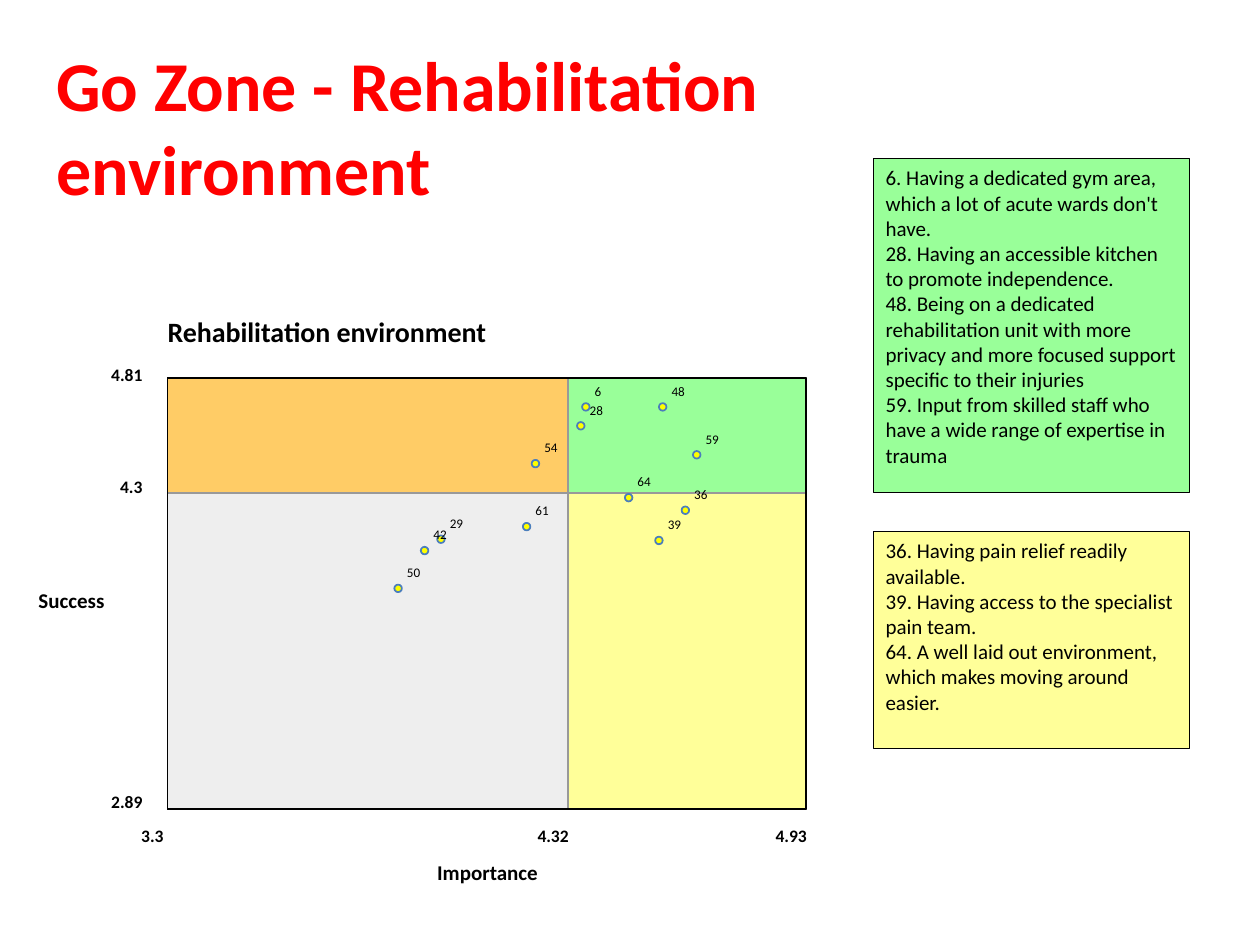
from lxml.etree import SubElement
from pptx import Presentation
from pptx.dml.color import RGBColor
from pptx.enum.shapes import MSO_CONNECTOR, MSO_SHAPE
from pptx.enum.text import MSO_ANCHOR, PP_ALIGN
from pptx.oxml.ns import qn
from pptx.util import Inches, Pt

RED = RGBColor(0xFF, 0x00, 0x00)
BLACK = RGBColor(0x00, 0x00, 0x00)
GREY = RGBColor(0x99, 0x99, 0x99)
ORANGE = RGBColor(0xFF, 0xCC, 0x66)
GREEN = RGBColor(0x99, 0xFF, 0x99)
PALE_GREY = RGBColor(0xEE, 0xEE, 0xEE)
PALE_YELLOW = RGBColor(0xFF, 0xFF, 0x99)
YELLOW = RGBColor(0xFF, 0xFF, 0x00)
BLUE = RGBColor(0x4B, 0x7E, 0xBC)
LEFT, CENTER, RIGHT = PP_ALIGN.LEFT, PP_ALIGN.CENTER, PP_ALIGN.RIGHT

# Content
TITLE = "Go Zone - Rehabilitation environment"
GREEN_ITEMS = [
    "6. Having a dedicated gym area, which a lot of acute wards don't have.",
    "28. Having an accessible kitchen to promote independence.",
    "48. Being on a dedicated rehabilitation unit with more privacy and more "
    "focused support specific to their injuries",
    "59. Input from skilled staff who have a wide range of expertise in trauma",
]
YELLOW_ITEMS = [
    "36. Having pain relief readily available.",
    "39. Having access to the specialist pain team.",
    "64. A well laid out environment, which makes moving around easier.",
]
# Statement number, then left and top of its dot
DOTS = [
    ("6", 4.62, 3.20), ("28", 4.58, 3.35), ("48", 5.23, 3.20), ("59", 5.50, 3.58),
    ("29", 3.47, 4.25), ("42", 3.34, 4.34), ("50", 3.13, 4.64), ("61", 4.15, 4.15),
    ("36", 5.41, 4.02), ("39", 5.20, 4.26), ("64", 4.96, 3.92), ("54", 4.22, 3.65),
]

# Plot grid: edges and the two mean lines
COLUMNS = [1.33, 4.51, 6.40]
ROWS = [3.00, 3.91, 6.42]
QUADRANTS = [[ORANGE, GREEN], [PALE_GREY, PALE_YELLOW]]
DOT_SIZE = 0.06

# Text, anchor x, top, box width, size, bold, alignment
LABELS = [
    ("Rehabilitation environment", COLUMNS[0], 2.50, 3, 16, True, LEFT),
    ("Success", 0.83, 4.66, 0.7, 12, True, RIGHT),
    ("Importance", 3.87, 6.82, 1, 12, True, CENTER),
]
LABELS += [(text, 1.13, top, 0.4, 10, True, RIGHT)
           for text, top in zip(["4.81", "4.3", "2.89"], [2.89, 3.78, 6.28])]
LABELS += [(text, edge - 0.12, 6.55, 0.4, 10, True, CENTER)
           for text, edge in zip(["3.3", "4.32", "4.93"], COLUMNS)]
LABELS += [(text, left + 0.1, top - 0.16, 0.2, 7.5, False, LEFT)
           for text, left, top in DOTS]


def write(text_frame, lines, size, bold=False, color=BLACK, align=LEFT):
    text_frame.text = "\n".join(lines)
    for paragraph in text_frame.paragraphs:
        paragraph.alignment = align
        font = paragraph.runs[0].font
        font.name, font.size, font.bold = "Calibri", Pt(size), bold
        font.color.rgb = color


def add_box(slide, kind, left, top, width, height, fill, line=BLACK, weight=1):
    shape = slide.shapes.add_shape(
        kind, Inches(left), Inches(top), Inches(width), Inches(height))
    shape.shadow.inherit = False
    if fill is None:
        shape.fill.background()
    else:
        shape.fill.solid()
        shape.fill.fore_color.rgb = fill
    shape.line.color.rgb = line
    shape.line.width = Pt(weight)
    return shape


def add_line(slide, x1, y1, x2, y2):
    connector = slide.shapes.add_connector(
        MSO_CONNECTOR.STRAIGHT, Inches(x1), Inches(y1), Inches(x2), Inches(y2))
    connector.line.color.rgb = GREY
    connector.line.width = Pt(1)
    SubElement(connector._element.spPr, qn("a:effectLst"))


def add_label(slide, text, x, top, width, size, bold, align):
    left = x - {LEFT: 0, CENTER: width / 2, RIGHT: width}[align]
    box = slide.shapes.add_textbox(
        Inches(left), Inches(top), Inches(width), Inches(size * 1.22 / 72))
    frame = box.text_frame
    frame.word_wrap = True
    frame.margin_left = frame.margin_right = frame.margin_top = frame.margin_bottom = 0
    write(frame, [text], size, bold, align=align)


def add_panel(slide, top, height, fill, items):
    shape = add_box(slide, MSO_SHAPE.RECTANGLE, 6.93, top, 2.51, height, fill, weight=0.75)
    shape.text_frame.vertical_anchor = MSO_ANCHOR.TOP
    write(shape.text_frame, items, 12)


def main():
    presentation = Presentation()
    presentation.slide_width, presentation.slide_height = Inches(10), Inches(7.5)
    slide = presentation.slides.add_slide(presentation.slide_layouts[6])

    # Title
    title = slide.shapes.add_textbox(Inches(0.35), Inches(0.53), Inches(7.17), Inches(0.94))
    title.text_frame.word_wrap = True
    title.text_frame.vertical_anchor = MSO_ANCHOR.MIDDLE
    write(title.text_frame, [TITLE], 40, True, RED)

    # Quadrants, mean lines and frame
    for row, fills in enumerate(QUADRANTS):
        for column, fill in enumerate(fills):
            add_box(slide, MSO_SHAPE.RECTANGLE, COLUMNS[column], ROWS[row],
                    COLUMNS[column + 1] - COLUMNS[column], ROWS[row + 1] - ROWS[row], fill)
    add_line(slide, COLUMNS[1], ROWS[2], COLUMNS[1], ROWS[0])
    add_line(slide, COLUMNS[0], ROWS[1], COLUMNS[2], ROWS[1])
    add_box(slide, MSO_SHAPE.RECTANGLE, COLUMNS[0], ROWS[0],
            COLUMNS[2] - COLUMNS[0], ROWS[2] - ROWS[0], None)

    # Dots and all plot labels
    for _, left, top in DOTS:
        add_box(slide, MSO_SHAPE.OVAL, left, top, DOT_SIZE, DOT_SIZE, YELLOW, BLUE)
    for label in LABELS:
        add_label(slide, *label)

    # Statement panels
    add_panel(slide, 1.26, 2.65, GREEN, GREEN_ITEMS)
    add_panel(slide, 4.22, 1.72, PALE_YELLOW, YELLOW_ITEMS)

    presentation.save("out.pptx")


if __name__ == "__main__":
    main()
